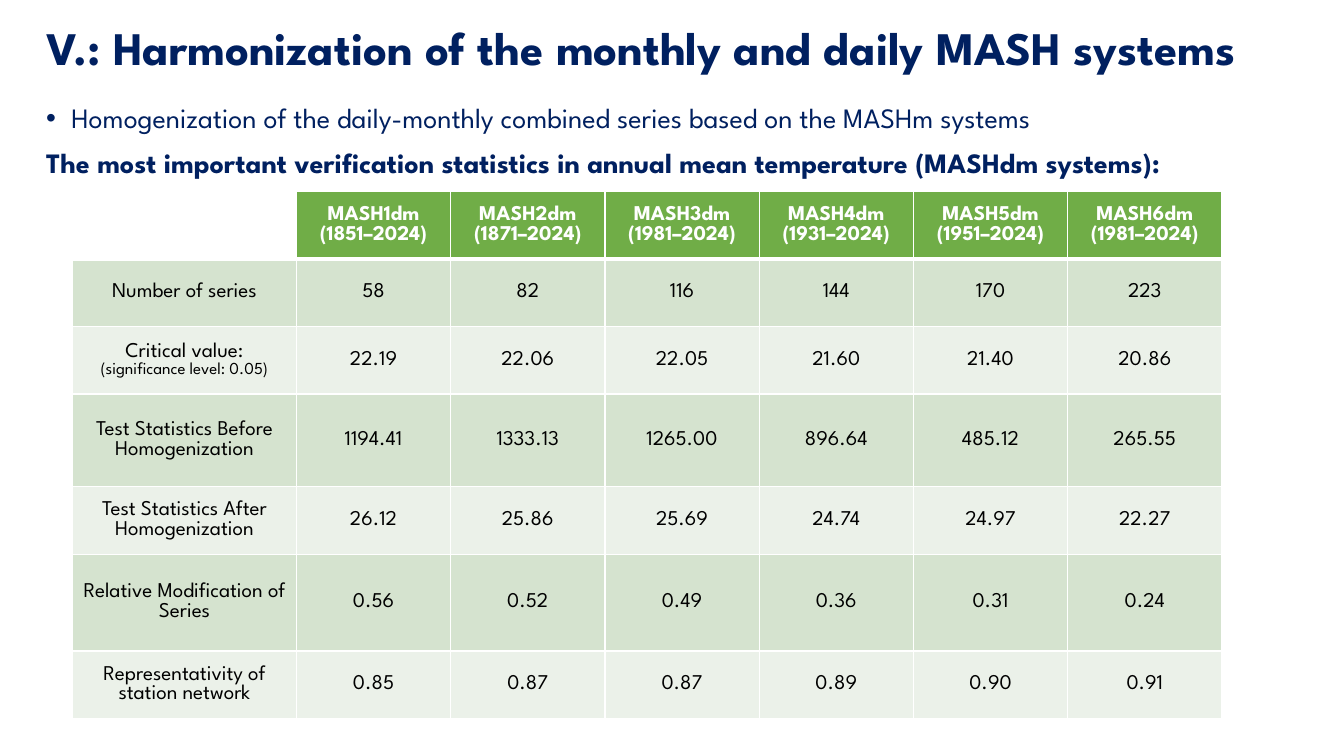
"""Build the slide on harmonizing the monthly and daily MASH systems."""
from dataclasses import dataclass

from lxml import etree
from pptx import Presentation
from pptx.dml.color import RGBColor
from pptx.enum.text import MSO_ANCHOR, PP_ALIGN
from pptx.oxml.ns import qn
from pptx.util import Inches, Pt

MIDDLE, TOP = MSO_ANCHOR.MIDDLE, MSO_ANCHOR.TOP
CENTER, LEFT = PP_ALIGN.CENTER, PP_ALIGN.LEFT

TITLE = "V.: Harmonization of the monthly and daily MASH systems"
BULLET = "Homogenization of the daily-monthly combined series based on the MASHm systems"
LEAD = "The most important verification statistics in annual mean temperature (MASHdm systems):"
SYSTEMS = [
    ("MASH1dm", "(1851–2024)"),
    ("MASH2dm", "(1871–2024)"),
    ("MASH3dm", "(1981–2024)"),
    ("MASH4dm", "(1931–2024)"),
    ("MASH5dm", "(1951–2024)"),
    ("MASH6dm", "(1981–2024)"),
]
STATISTICS = [
    (("Number of series",), "58 82 116 144 170 223"),
    (("Critical value:", "(significance level: 0.05)"), "22.19 22.06 22.05 21.60 21.40 20.86"),
    (("Test Statistics Before Homogenization",), "1194.41 1333.13 1265.00 896.64 485.12 265.55"),
    (("Test Statistics After Homogenization",), "26.12 25.86 25.69 24.74 24.97 22.27"),
    (("Relative Modification of Series",), "0.56 0.52 0.49 0.36 0.31 0.24"),
    (("Representativity of station network",), "0.85 0.87 0.87 0.89 0.90 0.91"),
]


@dataclass(frozen=True)
class Theme:
    """Colours, font and type sizes."""
    font: str = "League Spartan"
    navy: str = "002060"
    white: str = "FFFFFF"
    black: str = "000000"
    header: str = "70AD47"
    bands: tuple = ("D5E3CF", "EBF1E9")
    title: float = 33.3
    body: float = 20
    cell: float = 15
    note: float = 12
    rule: float = 1
    header_rule: float = 3


THEME = Theme()
SLIDE_W, SLIDE_H = 13.33, 7.5
MARGIN, TITLE_H = 0.36, 0.99
TABLE_LEFT, TABLE_TOP = 2 * MARGIN, 1.9
LABEL_W, SYSTEM_W, ROW_H = 2.22, 1.53, 0.67
TALL_ROWS = {3: 0.92, 5: 0.96}
CELL_INSET = 0.07


def write(paragraph, text, size, color, bold=False, align=LEFT):
    """Put one formatted run in a paragraph."""
    paragraph.alignment = align
    run = paragraph.add_run()
    run.text = text
    formats = {"name": THEME.font, "size": Pt(size), "bold": bold}
    for key, value in formats.items():
        setattr(run.font, key, value)
    run.font.color.rgb = RGBColor.from_string(color)


def add_text_frame(slide, left, top, width, height, anchor):
    """Add a wrapping text box and return its frame."""
    frame = slide.shapes.add_textbox(*map(Inches, (left, top, width, height))).text_frame
    frame.word_wrap = True
    frame.vertical_anchor = anchor
    return frame


def add_bullet(paragraph, indent):
    """Give a paragraph a hanging round bullet."""
    properties = paragraph._p.get_or_add_pPr()
    properties.set("marL", str(Inches(indent)))
    properties.set("indent", str(-Inches(indent)))
    etree.SubElement(properties, qn("a:buFont"), typeface="Arial")
    etree.SubElement(properties, qn("a:buChar"), char="•")


def add_borders(cell, top, bottom):
    """Draw white rules on all sides of a cell."""
    properties = cell._tc.get_or_add_tcPr()
    widths = {"lnL": THEME.rule, "lnR": THEME.rule, "lnT": top, "lnB": bottom}
    for side, width in widths.items():
        line = etree.SubElement(properties, qn(f"a:{side}"), w=str(Pt(width)))
        fill = etree.SubElement(line, qn("a:solidFill"))
        etree.SubElement(fill, qn("a:srgbClr"), val=THEME.white)


def fill_cell(cell, lines, row):
    """Write and format one table cell."""
    is_header = row == 0
    cell.vertical_anchor = MIDDLE
    cell.margin_left = cell.margin_right = Inches(CELL_INSET)
    add_borders(cell,
                THEME.header_rule if row == 1 else THEME.rule,
                THEME.header_rule if is_header else THEME.rule)
    if not lines:
        cell.fill.background()
        return
    cell.fill.solid()
    band = THEME.header if is_header else THEME.bands[(row - 1) % 2]
    cell.fill.fore_color.rgb = RGBColor.from_string(band)
    for index, line in enumerate(lines):
        frame = cell.text_frame
        paragraph = frame.add_paragraph() if index else frame.paragraphs[0]
        size = THEME.note if index and not is_header else THEME.cell
        color = THEME.white if is_header else THEME.black
        write(paragraph, line, size, color, is_header, CENTER)


def add_statistics_table(slide):
    """Add the table of verification statistics."""
    rows = [[(), *SYSTEMS]]
    rows += [[label, *((value,) for value in values.split())] for label, values in STATISTICS]
    widths = [LABEL_W] + [SYSTEM_W] * len(SYSTEMS)
    heights = [TALL_ROWS.get(row, ROW_H) for row in range(len(rows))]
    table = slide.shapes.add_table(
        len(rows), len(widths),
        *map(Inches, (TABLE_LEFT, TABLE_TOP, sum(widths), sum(heights)))).table
    for column, width in zip(table.columns, widths):
        column.width = Inches(width)
    for row, (cells, height) in enumerate(zip(rows, heights)):
        table.rows[row].height = Inches(height)
        for column, lines in enumerate(cells):
            fill_cell(table.cell(row, column), lines, row)


def main():
    """Assemble and save the slide."""
    deck = Presentation()
    deck.slide_width, deck.slide_height = Inches(SLIDE_W), Inches(SLIDE_H)
    slide = deck.slides.add_slide(deck.slide_layouts[6])

    title = add_text_frame(slide, MARGIN, 0, SLIDE_W - MARGIN, TITLE_H, MIDDLE).paragraphs[0]
    title.line_spacing = 0.9
    write(title, TITLE, THEME.title, THEME.navy, True)

    body = add_text_frame(slide, MARGIN, TITLE_H, 12.36, 6.17, TOP)
    bullet, lead = body.paragraphs[0], body.add_paragraph()
    add_bullet(bullet, 0.25)
    lead.space_before = Pt(10)
    for paragraph, text, bold in ((bullet, BULLET, False), (lead, LEAD, True)):
        paragraph.line_spacing = 0.9
        write(paragraph, text, THEME.body, THEME.navy, bold)

    add_statistics_table(slide)
    deck.save("out.pptx")


if __name__ == "__main__":
    main()
